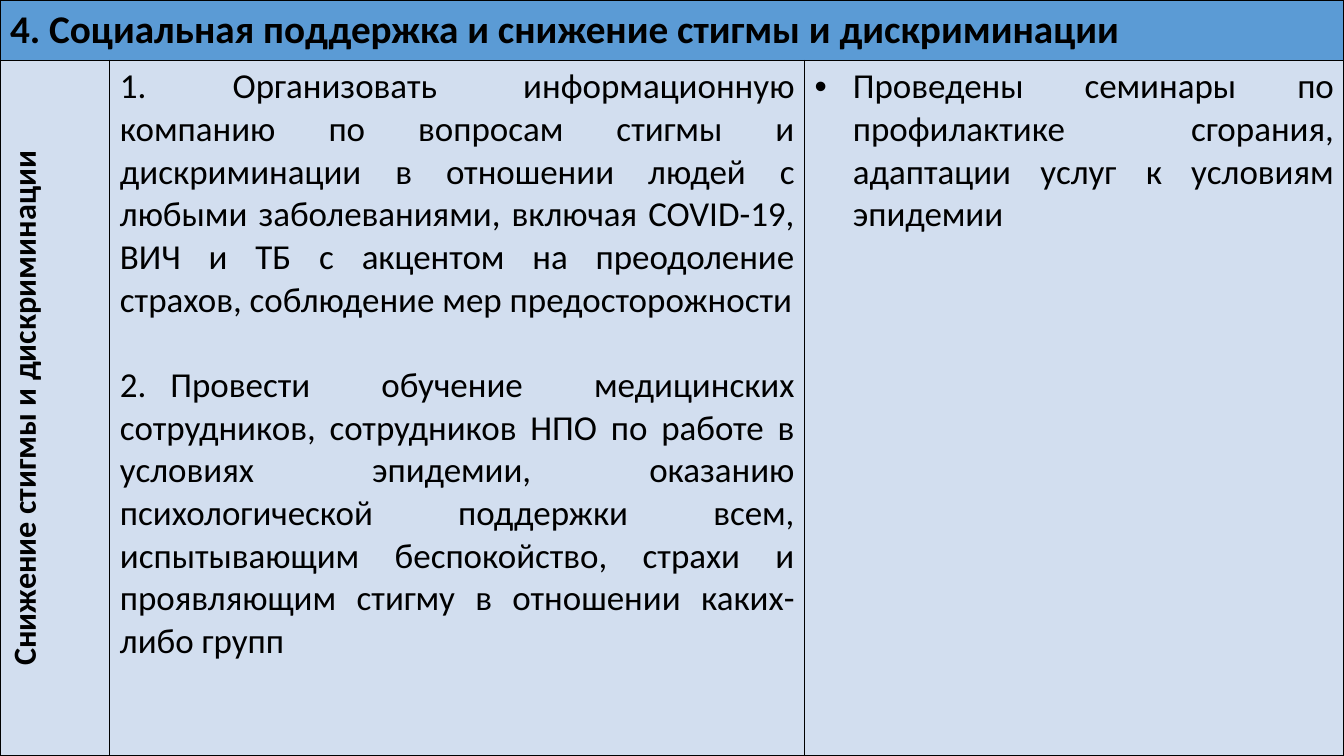
"""Build a one-table slide on social support and reducing stigma."""
import lxml.etree
import pptx
import pptx.dml.color
import pptx.enum.text
import pptx.oxml.ns
import pptx.util

Inches = pptx.util.Inches
Pt = pptx.util.Pt
ALIGN = pptx.enum.text.PP_ALIGN
ANCHOR = pptx.enum.text.MSO_ANCHOR
BLACK = pptx.dml.color.RGBColor(0x00, 0x00, 0x00)
HEADING_BLUE = pptx.dml.color.RGBColor(0x5B, 0x9B, 0xD5)
PALE_BLUE = pptx.dml.color.RGBColor(0xD2, 0xDE, 0xEF)
qn = pptx.oxml.ns.qn


def add_border(cell):
    properties = cell._tc.get_or_add_tcPr()
    for position, side in enumerate(("lnL", "lnR", "lnT", "lnB")):
        edge = lxml.etree.Element(qn("a:" + side), w=str(Pt(1)))
        fill = lxml.etree.SubElement(edge, qn("a:solidFill"))
        lxml.etree.SubElement(fill, qn("a:srgbClr"), val=str(BLACK))
        properties.insert(position, edge)


def write(paragraph, text, size, bold, alignment):
    paragraph.alignment = alignment
    run = paragraph.add_run()
    run.text = text
    run.font.name = "Calibri"
    run.font.size = Pt(size)
    run.font.bold = bold
    run.font.color.rgb = BLACK


deck = pptx.Presentation()
deck.slide_width = Inches(13.33)
deck.slide_height = Inches(7.5)
slide = deck.slides.add_slide(deck.slide_layouts[6])

plan = slide.shapes.add_table(2, 3, 0, 0, deck.slide_width, deck.slide_height).table
for column, width in zip(plan.columns, (1.09, 6.89, 5.35)):
    column.width = Inches(width)
for row, height in zip(plan.rows, (0.6, 6.9)):
    row.height = Inches(height)

for row, color in zip(plan.rows, (HEADING_BLUE, PALE_BLUE)):
    for cell in row.cells:
        cell.fill.solid()
        cell.fill.fore_color.rgb = color
        add_border(cell)

heading = plan.cell(0, 0)
heading.merge(plan.cell(0, 2))
heading.vertical_anchor = ANCHOR.MIDDLE
write(heading.text_frame.paragraphs[0],
      "4. Социальная поддержка и снижение стигмы и дискриминации",
      28, True, ALIGN.LEFT)

direction = plan.cell(1, 0)
direction.vertical_anchor = ANCHOR.MIDDLE
direction._tc.get_or_add_tcPr().set("vert", "vert270")
write(direction.text_frame.paragraphs[0], "Снижение стигмы и дискриминации",
      23, True, ALIGN.CENTER)

tasks = plan.cell(1, 1).text_frame
write(tasks.paragraphs[0],
      "1. Организовать информационную компанию по вопросам стигмы и "
      "дискриминации в отношении людей с любыми заболеваниями, включая "
      "COVID-19, ВИЧ и ТБ с акцентом на преодоление страхов, соблюдение мер "
      "предосторожности", 25, False, ALIGN.JUSTIFY)
training = tasks.add_paragraph()
training.space_before = Pt(30.5)
write(training,
      "2.\tПровести обучение медицинских сотрудников, сотрудников НПО по "
      "работе в условиях эпидемии, оказанию психологической поддержки всем, "
      "испытывающим беспокойство, страхи и проявляющим стигму в отношении "
      "каких-либо групп", 25, False, ALIGN.JUSTIFY)

result = plan.cell(1, 2).text_frame.paragraphs[0]
write(result,
      "Проведены семинары по профилактике сгорания, адаптации услуг к "
      "условиям эпидемии", 25, False, ALIGN.JUSTIFY)
result_format = result._p.get_or_add_pPr()
result_format.set("marL", str(Inches(0.38)))
result_format.set("indent", str(Inches(-0.38)))
lxml.etree.SubElement(result_format, qn("a:buFont"), typeface="Arial")
lxml.etree.SubElement(result_format, qn("a:buChar"), char="•")

deck.save("out.pptx")
